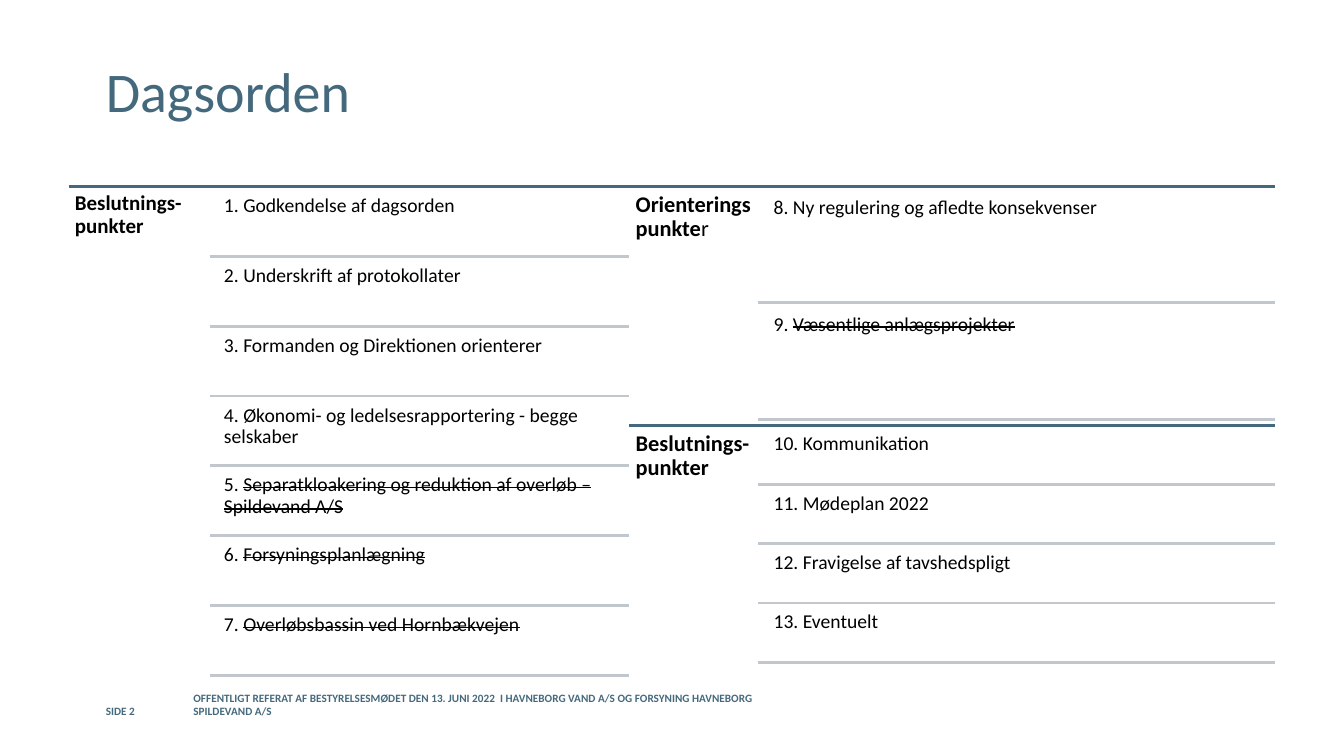
import pptx
import pptx.dml.color
import pptx.enum.shapes
import pptx.enum.text
import pptx.oxml.xmlchemy
import pptx.util

Pt = pptx.util.Pt
ANCHOR = pptx.enum.text.MSO_ANCHOR

THEME = {
    "font": "Calibri",
    "accent": "44697D",
    "rule": "C1C7CC",
    "text": "000000",
    "title": 40,
    "item": 14,
    "footer": 8,
    "rule_width": 2,
}

TITLE = ("Dagsorden", (75.6, 15.1, 852.5, 73.4))
FOOTERS = [
    ("SIDE 2", (75.6, 499, 49, 13.7)),
    ("OFFENTLIGT REFERAT AF BESTYRELSESMØDET DEN 13. JUNI 2022  I HAVNEBORG VAND A/S "
     "OG FORSYNING HAVNEBORG SPILDEVAND A/S", (138.2, 499, 436.3, 13.7)),
]

KEPT, DROPPED = False, True
SECTIONS = [
    {
        "heading": [("Beslutnings-punkter", True)],
        "heading_size": 15, "heading_inset": 4.5,
        "box": (49, 133.2, 400.3, 352.8), "heading_width": 100.8, "row_height": 47.5,
        "items": [
            ("Godkendelse af dagsorden", KEPT),
            ("Underskrift af protokollater", KEPT),
            ("Formanden og Direktionen orienterer", KEPT),
            ("Økonomi- og ledelsesrapportering - begge selskaber", KEPT),
            ("Separatkloakering og reduktion af overløb – Spildevand A/S", DROPPED),
            ("Forsyningsplanlægning", DROPPED),
            ("Overløbsbassin ved Hornbækvejen", DROPPED),
        ],
    },
    {
        "heading": [("Orienteringspunkte", True), ("r", False)],
        "heading_size": 16, "heading_inset": 4.8,
        "box": (449.3, 133.2, 461.5, 170.6), "heading_width": 92.2, "row_height": 79.2,
        "items": [
            ("Ny regulering og afledte konsekvenser", KEPT),
            ("Væsentlige anlægsprojekter", DROPPED),
        ],
    },
    {
        "heading": [("Beslutnings-punkter", True)],
        "heading_size": 16, "heading_inset": 4.8,
        "box": (449.3, 303.8, 461.5, 170.6), "heading_width": 92.2, "row_height": 40.3,
        "items": [
            ("Kommunikation", KEPT),
            ("Mødeplan 2022", KEPT),
            ("Fravigelse af tavshedspligt", KEPT),
            ("Eventuelt", KEPT),
        ],
    },
]
ROW_GAP_SHARE = 0.05
INDENT_SHARE = 0.015


def set_values(target, values):
    for name, value in values.items():
        setattr(target, name, value)


def rgb(name):
    return pptx.dml.color.RGBColor.from_string(THEME[name])


def add_text(slide, box, pieces, size, color, inset=0, anchor=ANCHOR.TOP, spacing=1.0):
    frame = slide.shapes.add_textbox(*map(Pt, box)).text_frame
    margins = {f"margin_{side}": Pt(inset) for side in ("left", "top", "right", "bottom")}
    set_values(frame, {"word_wrap": True, "vertical_anchor": anchor, **margins})
    paragraph = frame.paragraphs[0]
    paragraph.line_spacing = spacing
    for words, bold, struck in pieces:
        run = paragraph.add_run()
        run.text = words
        set_values(run.font, {"name": THEME["font"], "size": Pt(size), "bold": bold})
        run.font.color.rgb = rgb(color)
        if struck:
            run._r.get_or_add_rPr().set("strike", "sngStrike")


def add_rule(slide, left, right, y, color):
    rule = slide.shapes.add_connector(
        pptx.enum.shapes.MSO_CONNECTOR.STRAIGHT, Pt(left), Pt(y), Pt(right), Pt(y))
    rule.line.color.rgb = rgb(color)
    rule.line.width = Pt(THEME["rule_width"])
    rule._element.spPr.append(pptx.oxml.xmlchemy.OxmlElement("a:effectLst"))


def add_section(slide, section, first_number):
    left, top, width, height = section["box"]
    right = left + width
    rows_left = left + section["heading_width"]
    item_left = rows_left + INDENT_SHARE * width
    row_height = section["row_height"]
    gap = ROW_GAP_SHARE * row_height

    add_rule(slide, left, right, top, "accent")
    heading = [(words, bold, False) for words, bold in section["heading"]]
    add_text(slide, (left, top, section["heading_width"], height), heading,
             section["heading_size"], "text", section["heading_inset"], spacing=0.9)
    for row, (words, struck) in enumerate(section["items"]):
        item_top = top + gap + row * (row_height + gap)
        pieces = [(f"{first_number + row}. ", False, False), (words, False, struck)]
        add_text(slide, (item_left, item_top, right - item_left, row_height), pieces,
                 THEME["item"], "text", 4.2, spacing=0.9)
        add_rule(slide, rows_left, right, item_top + row_height, "rule")


def main():
    deck = pptx.Presentation()
    set_values(deck, {"slide_width": Pt(960), "slide_height": Pt(540)})
    slide = deck.slides.add_slide(deck.slide_layouts[6])

    number = 1
    for section in SECTIONS:
        add_section(slide, section, number)
        number += len(section["items"])

    words, box = TITLE
    add_text(slide, box, [(words, False, False)], THEME["title"], "accent", anchor=ANCHOR.BOTTOM)
    for words, box in FOOTERS:
        add_text(slide, box, [(words, True, False)], THEME["footer"], "accent",
                 anchor=ANCHOR.BOTTOM)
    deck.save("out.pptx")


if __name__ == "__main__":
    main()
